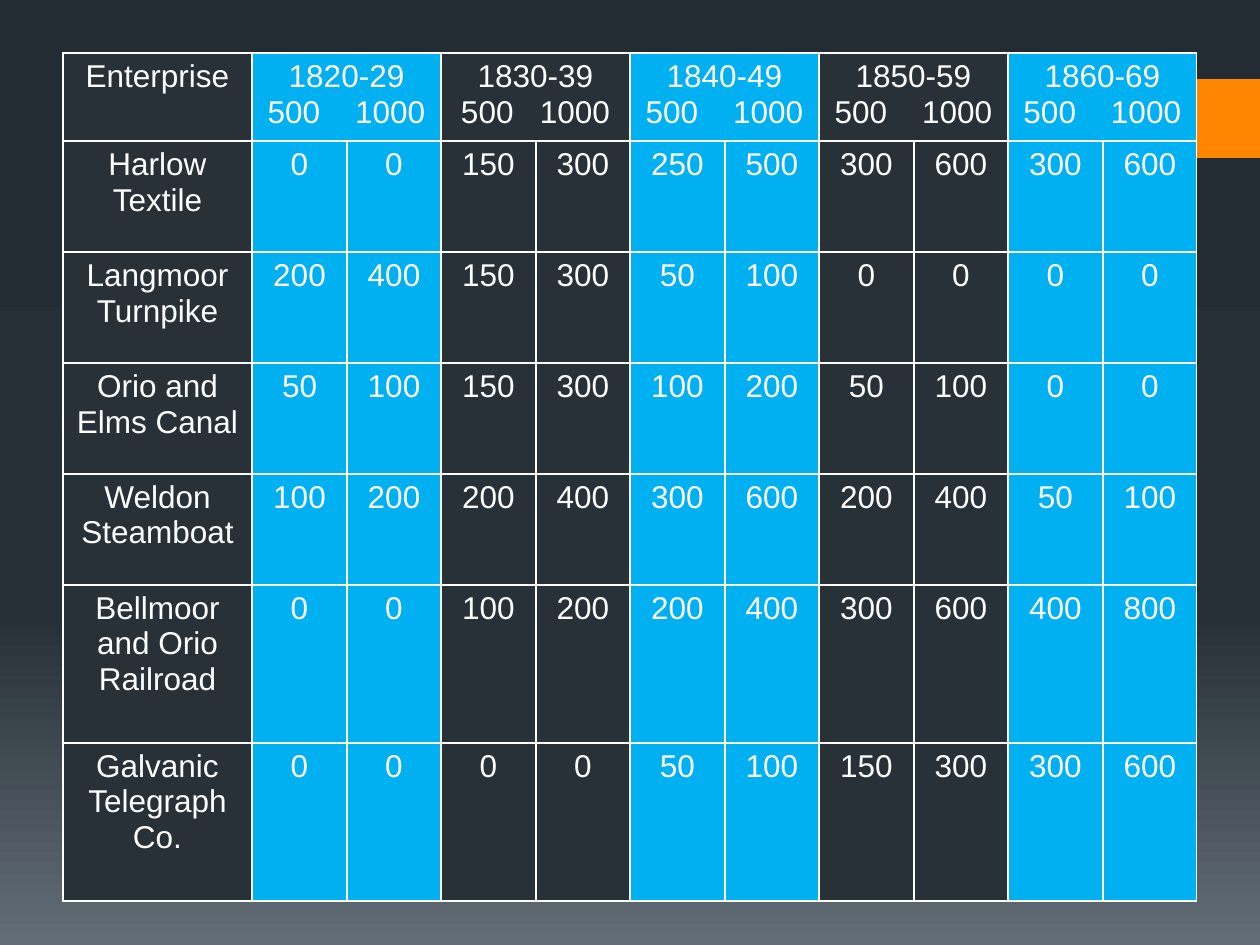
from lxml import etree
from pptx import Presentation
from pptx.dml.color import RGBColor
from pptx.enum.shapes import MSO_SHAPE
from pptx.enum.text import PP_ALIGN
from pptx.oxml.ns import qn
from pptx.util import Pt

RECTANGLE = MSO_SHAPE.RECTANGLE
CENTER = PP_ALIGN.CENTER

EMU_PER_PX = 914400 / 126
WHITE, DARK, BLUE, ORANGE = "FFFFFF", "283138", "00B0F0", "FF8600"
BACKGROUND_STOPS = [(0, "242C33"), (65, "273037"), (100, "636D76")]

# Each period with the extra points between its two share counts
PERIODS = [("1820-29", 15), ("1830-39", 10), ("1840-49", 15),
           ("1850-59", 15), ("1860-69", 15)]
SHARES = ("500", "1000")
ENTERPRISES = [
    ("Harlow Textile", [0, 0, 150, 300, 250, 500, 300, 600, 300, 600]),
    ("Langmoor Turnpike", [200, 400, 150, 300, 50, 100, 0, 0, 0, 0]),
    ("Orio and Elms Canal", [50, 100, 150, 300, 100, 200, 50, 100, 0, 0]),
    ("Weldon Steamboat", [100, 200, 200, 400, 300, 600, 200, 400, 50, 100]),
    ("Bellmoor and Orio Railroad", [0, 0, 100, 200, 200, 400, 300, 600, 400, 800]),
    ("Galvanic Telegraph Co.", [0, 0, 0, 0, 50, 100, 150, 300, 300, 600]),
]
COLUMN_WIDTHS = [189] + [95, 94] * len(PERIODS)
ROW_HEIGHTS = [88] + [111] * 4 + [158] * 2


def px(length):
    return round(length * EMU_PER_PX)


def color(hex_string):
    return RGBColor.from_string(hex_string)


def write_text(paragraph, text, *, font, size, fill, align=CENTER, spacing=0):
    paragraph.alignment = align
    run = paragraph.add_run()
    run.text = text
    run.font.name = font
    run.font.size = Pt(size)
    run.font.color.rgb = color(fill)
    if spacing:
        run._r.get_or_add_rPr().set("spc", str(spacing * 100))


class SlideBuilder:
    def __init__(self, slide, font="Arial", size=18, text_color=WHITE):
        self.slide = slide
        self.text_style = {"font": font, "size": size, "fill": text_color}

    def background(self, stops):
        fill = self.slide.background.fill
        fill.gradient()
        fill.gradient_angle = 270
        stop_list = self.slide._element.find(".//" + qn("a:gsLst"))
        for old_stop in list(stop_list):
            stop_list.remove(old_stop)
        for percent, hex_string in stops:
            stop = etree.SubElement(stop_list, qn("a:gs"), pos=str(percent * 1000))
            etree.SubElement(stop, qn("a:srgbClr"), val=hex_string)

    def rectangle(self, left, top, width, height, fill):
        shape = self.slide.shapes.add_shape(
            RECTANGLE, px(left), px(top), px(width), px(height))
        shape.shadow.inherit = False
        shape.fill.solid()
        shape.fill.fore_color.rgb = color(fill)
        shape.line.fill.background()

    def table(self, left, top, column_widths, row_heights):
        frame = self.slide.shapes.add_table(
            len(row_heights), len(column_widths), px(left), px(top),
            px(sum(column_widths)), px(sum(row_heights)))
        table = frame.table
        table.first_row = table.horz_banding = False
        for column, width in zip(table.columns, column_widths):
            column.width = px(width)
        for row, height in zip(table.rows, row_heights):
            row.height = px(height)
            for index, cell in enumerate(row.cells):
                # The label column is dark; period pairs alternate from blue
                self.style_cell(cell, BLUE if (index + 1) // 2 % 2 else DARK)
        return table

    def style_cell(self, cell, fill, border=WHITE):
        properties = cell._tc.get_or_add_tcPr()
        for side in ("lnL", "lnR", "lnT", "lnB"):
            line = etree.SubElement(properties, qn("a:" + side), w=str(Pt(1)))
            solid = etree.SubElement(line, qn("a:solidFill"))
            etree.SubElement(solid, qn("a:srgbClr"), val=border)
        cell.fill.solid()
        cell.fill.fore_color.rgb = color(fill)

    def cell_text(self, cell, text):
        write_text(cell.text_frame.paragraphs[0], text, **self.text_style)

    def period_header(self, cell, period, gap):
        self.cell_text(cell, period)
        paragraph = cell.text_frame.add_paragraph()
        low, high = SHARES
        for text, spacing in ((low, 0), (" ", gap), (high, 0)):
            write_text(paragraph, text, spacing=spacing, **self.text_style)


def main():
    presentation = Presentation()
    presentation.slide_width, presentation.slide_height = px(1260), px(945)
    builder = SlideBuilder(presentation.slides.add_slide(presentation.slide_layouts[6]))

    # Background and side accents
    builder.background(BACKGROUND_STOPS)
    builder.rectangle(1162, 79, 11, 79, ORANGE)
    builder.rectangle(1181, 79, 79, 79, ORANGE)

    # Table header: each period spans two columns
    table = builder.table(63, 53, COLUMN_WIDTHS, ROW_HEIGHTS)
    builder.cell_text(table.cell(0, 0), "Enterprise")
    for index, (period, gap) in enumerate(PERIODS):
        first = 2 * index + 1
        cell = table.cell(0, first)
        cell.merge(table.cell(0, first + 1))
        builder.period_header(cell, period, gap)

    # Table body
    for row, (name, values) in enumerate(ENTERPRISES, start=1):
        for column, value in enumerate([name, *values]):
            builder.cell_text(table.cell(row, column), str(value))

    presentation.save("out.pptx")


if __name__ == "__main__":
    main()
